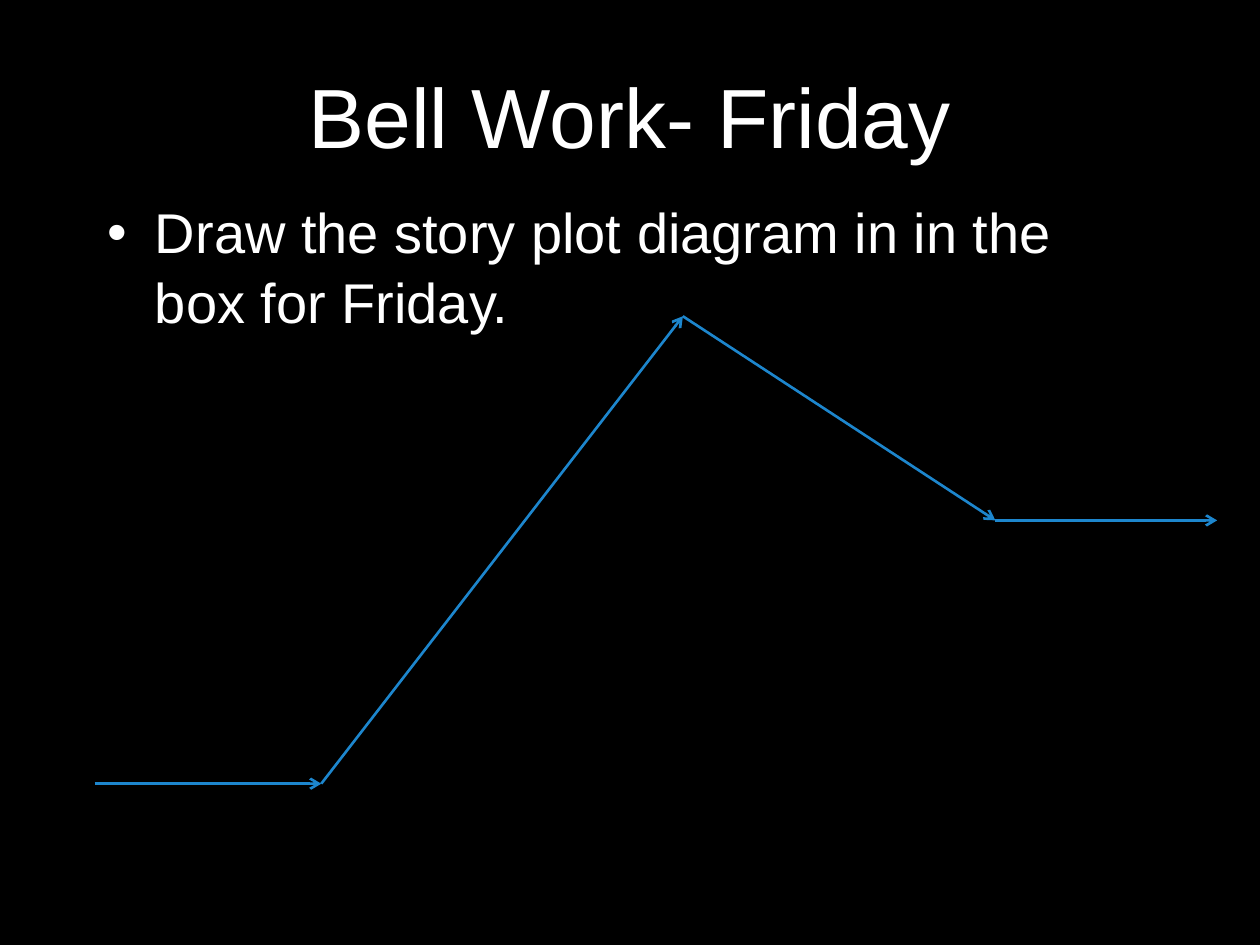
import itertools

import pptx
import pptx.dml.color
import pptx.enum.shapes
import pptx.enum.text
import pptx.oxml
import pptx.oxml.ns
import pptx.util

PX = 9144  # one px is a hundredth of an inch
FONT = "Arial"
COLORS = {"background": "000000", "text": "FFFFFF", "plot": "1D86CD"}


def px(length):
    return pptx.util.Emu(length * PX)


def color(name):
    return pptx.dml.color.RGBColor.from_string(COLORS[name])


def add_child(parent, tag, **attributes):
    child = pptx.oxml.parse_xml(f"<a:{tag} {pptx.oxml.ns.nsdecls('a')}/>")
    for key, value in attributes.items():
        child.set(key, value)
    parent.append(child)


def fill_placeholder(holder, box, text, size):
    """Move a placeholder to the box and return its one styled paragraph."""
    holder.left, holder.top, holder.width, holder.height = map(px, box)
    frame = holder.text_frame
    frame.text = text
    frame.word_wrap = True
    frame.auto_size = pptx.enum.text.MSO_AUTO_SIZE.NONE
    para = frame.paragraphs[0]
    para.space_before = pptx.util.Pt(0)
    for span in para.runs:
        span.font.name = FONT
        span.font.size = pptx.util.Pt(size)
        span.font.color.rgb = color("text")
    return para


def write_title(page, box):
    para = fill_placeholder(page.shapes.title, box, "Bell Work- Friday", 48)
    para.alignment = pptx.enum.text.PP_ALIGN.CENTER
    page.shapes.title.text_frame.vertical_anchor = pptx.enum.text.MSO_ANCHOR.MIDDLE


def write_task(page, box):
    holder = page.placeholders[1]
    para = fill_placeholder(
        holder, box, "Draw the story plot diagram in in the box for Friday.", 32)
    holder.text_frame.margin_top = px(7)
    para.line_spacing = 1.04
    properties = para._p.get_or_add_pPr()
    properties.set("marL", str(px(38)))
    properties.set("indent", str(px(-38)))
    add_child(properties, "buFont", typeface=FONT)
    add_child(properties, "buChar", char="•")


def draw_plot_diagram(page, box):
    """Draw exposition, rising action, falling action and resolution as arrows."""
    left, top, width, height = box
    turns = [(0, height), (180, height), (467, 0), (715, 162), (width, 162)]
    points = [(px(left + x), px(top + y)) for x, y in turns]
    for start, end in itertools.pairwise(points):
        arrow = page.shapes.add_connector(
            pptx.enum.shapes.MSO_CONNECTOR.STRAIGHT, *start, *end)
        arrow.line.color.rgb = color("plot")
        arrow.line.width = pptx.util.Pt(1.5)
        add_child(arrow.line._get_or_add_ln(), "tailEnd", type="arrow")
        add_child(arrow._element.spPr, "effectLst")


def main():
    deck = pptx.Presentation()
    deck.slide_width, deck.slide_height = px(1000), px(750)
    page = deck.slides.add_slide(deck.slide_layouts[1])
    page.background.fill.solid()
    page.background.fill.fore_color.rgb = color("background")
    write_title(page, (75, 13, 850, 156))
    write_task(page, (75, 148, 850, 522))
    draw_plot_diagram(page, (75, 251, 891, 371))
    deck.save("out.pptx")


if __name__ == "__main__":
    main()
